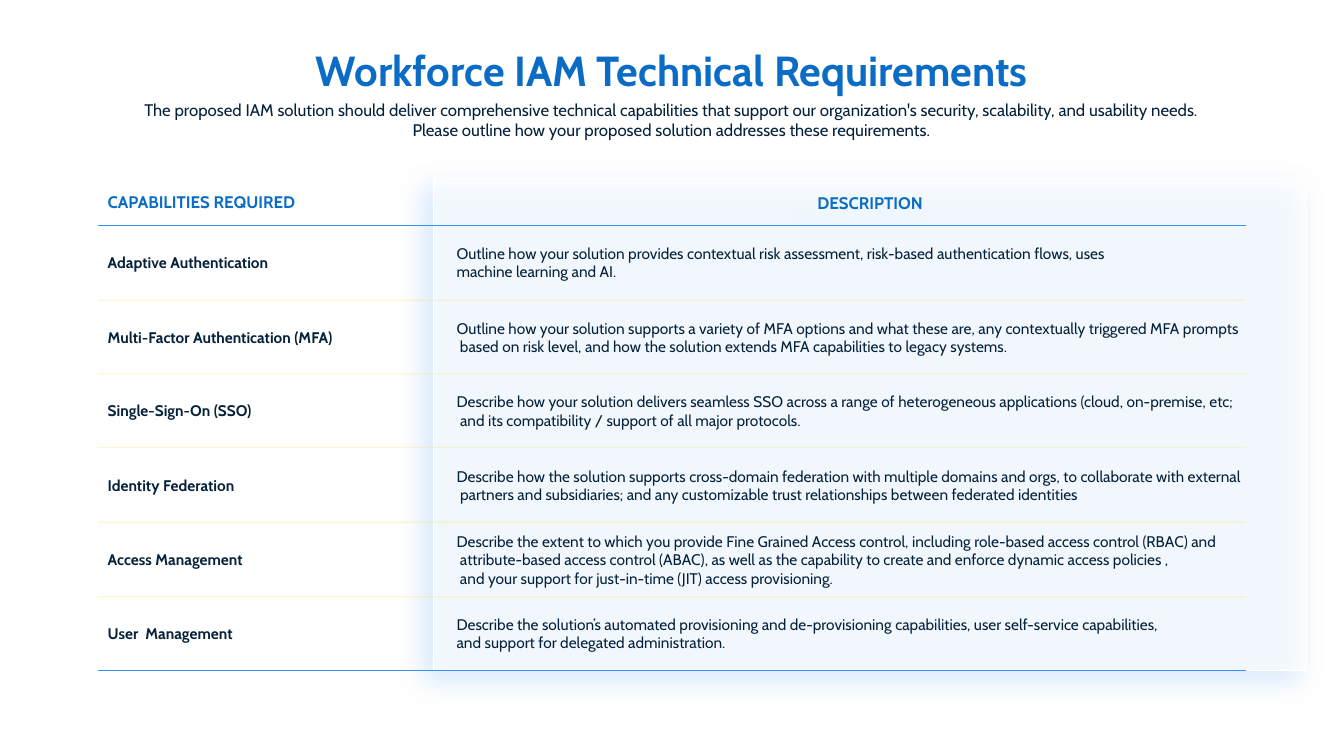
from lxml.etree import SubElement
from pptx import Presentation
from pptx.dml.color import RGBColor
from pptx.enum.shapes import MSO_CONNECTOR, MSO_SHAPE
from pptx.enum.text import MSO_ANCHOR, MSO_AUTO_SIZE, PP_ALIGN
from pptx.oxml.ns import qn
from pptx.util import Pt

PX = 9144
FONT = "Cabin"
COLORS = {
    "heading": "0B6CC6",
    "body": "06223B",
    "panel": "FFFFFF",
    "rule": "378FF2",
    "divider": "FCDA27",
}
LEFT, RIGHT = 97, 1236
TABLE_TOP, TABLE_BOTTOM = 224, 665
DESCRIPTION_LEFT = 443

# Capability, label width, description width, description
REQUIREMENTS = [
    ("Adaptive Authentication", 190, 696,
     "Outline how your solution provides contextual risk assessment, "
     "risk-based authentication flows, uses \v"
     "machine learning and AI."),
    ("Multi-Factor Authentication (MFA)", 257, 814,
     "Outline how your solution supports a variety of MFA options and what these are, "
     "any contextually triggered MFA prompts\v"
     " based on risk level, and how the solution extends MFA capabilities to legacy systems."),
    ("Single-Sign-On (SSO)", 167, 825,
     "Describe how your solution delivers seamless SSO across a range of "
     "heterogeneous applications (cloud, on-premise, etc;\v"
     " and its compatibility / support of all major protocols."),
    ("Identity Federation", 153, 825,
     "Describe how the solution supports cross-domain federation with multiple "
     "domains and orgs, to collaborate with external\v"
     " partners and subsidiaries; and any customizable trust relationships "
     "between federated identities"),
    ("Access Management", 166, 804,
     "Describe the extent to which you provide Fine Grained Access control, "
     "including role-based access control (RBAC) and\v"
     " attribute-based access control (ABAC), as well as the capability to create "
     "and enforce dynamic access policies ,\v"
     " and your support for just-in-time (JIT) access provisioning."),
    ("User  Management", 151, 755,
     "Describe the solution’s automated provisioning and de-provisioning capabilities, "
     "user self-service capabilities, \v"
     "and support for delegated administration."),
]


def emu(*lengths):
    """Turn px lengths into EMU."""
    return [length * PX for length in lengths]


def rgb(key):
    """Look up a palette colour."""
    return RGBColor.from_string(COLORS[key])


def write(frame, text, size, color, bold=False, align=PP_ALIGN.LEFT):
    """Fill a text frame with one formatted paragraph."""
    frame.text = text
    paragraph = frame.paragraphs[0]
    paragraph.alignment = align
    for run in paragraph.runs:
        run.font.name = FONT
        run.font.size = Pt(size)
        run.font.bold = bold
        run.font.color.rgb = rgb(color)


def add_text(shapes, box, text, size, color, bold=False, align=PP_ALIGN.LEFT,
             anchor=MSO_ANCHOR.MIDDLE, wrap=False):
    """Add a text box that grows with its text."""
    frame = shapes.add_textbox(*emu(*box)).text_frame
    frame.word_wrap = wrap
    frame.auto_size = MSO_AUTO_SIZE.SHAPE_TO_FIT_TEXT
    frame.vertical_anchor = anchor
    write(frame, text, size, color, bold, align)


def set_alpha(color_format, percent):
    """Set the opacity of a solid fill or line colour."""
    srgb = color_format.find(".//" + qn("a:srgbClr"))
    SubElement(srgb, qn("a:alpha"), val=str(percent * 1000))


def add_panel(shapes):
    """Add the translucent description panel with its soft shadow."""
    panel = shapes.add_shape(MSO_SHAPE.RECTANGLE, *emu(430, 176, 866, 489))
    panel.shadow.inherit = False
    panel.fill.solid()
    panel.fill.fore_color.rgb = rgb("panel")
    properties = panel.element.spPr
    set_alpha(properties.find(qn("a:solidFill")), 65)
    panel.line.color.rgb = rgb("panel")
    panel.line.width = Pt(0.5)
    shadow = SubElement(
        properties.find(qn("a:effectLst")), qn("a:outerShdw"),
        blurRad=str(Pt(20)), dist=str(Pt(10)), dir=str(135 * 60000),
        algn="tr", rotWithShape="0")
    tint = SubElement(shadow, qn("a:srgbClr"), val=COLORS["rule"])
    SubElement(tint, qn("a:alpha"), val="30000")
    frame = panel.text_frame
    frame.margin_top = 15 * PX
    frame.vertical_anchor = MSO_ANCHOR.TOP
    write(frame, "DESCRIPTION", 12, "heading", True, PP_ALIGN.CENTER)


def add_rule(shapes, y, color, opacity=100):
    """Add a horizontal rule across the whole table."""
    rule = shapes.add_connector(MSO_CONNECTOR.STRAIGHT, *emu(LEFT, y, RIGHT, y))
    rule.line.color.rgb = rgb(color)
    rule.line.width = Pt(1)
    properties = rule.element.spPr
    if opacity < 100:
        set_alpha(properties.find(qn("a:ln")), opacity)
    SubElement(properties, qn("a:effectLst"))


def add_requirements(shapes):
    """Add the capability labels, descriptions and row rules."""
    labels, descriptions, rules = (shapes.add_group_shape().shapes for _ in range(3))
    count = len(REQUIREMENTS)
    row_height = (TABLE_BOTTOM - TABLE_TOP) / count
    add_text(labels, (LEFT, 185, 209, 30), "CAPABILITIES REQUIRED", 12, "heading", True)
    for row, (capability, label_width, width, description) in enumerate(REQUIREMENTS):
        middle = TABLE_TOP + (row + 0.5) * row_height
        height = 28 + 19 * description.count("\v")
        add_text(labels, (LEFT, round(middle - 14.5), label_width, 29),
                 capability, 11, "body", True)
        add_text(descriptions, (DESCRIPTION_LEFT, round(middle - height / 2), width, height),
                 description, 11, "body")
    add_rule(rules, TABLE_TOP, "rule")
    for row in range(1, count):
        add_rule(rules, round(TABLE_TOP + row * row_height), "divider", 20)
    add_rule(rules, TABLE_BOTTOM, "rule")


def main():
    """Build the requirements slide and save it."""
    deck = Presentation()
    deck.slide_width, deck.slide_height = emu(1333, 750)
    shapes = deck.slides.add_slide(deck.slide_layouts[6]).shapes
    add_text(shapes, (109, 94, 1118, 50),
             "The proposed IAM solution should deliver comprehensive technical capabilities "
             "that support our organization's security, scalability, and usability needs. \v"
             "Please outline how your proposed solution addresses these requirements. ",
             12, "body", align=PP_ALIGN.CENTER, anchor=MSO_ANCHOR.TOP)
    add_text(shapes, (213, 39, 897, 61), " Workforce IAM Technical Requirements",
             30, "heading", True, PP_ALIGN.CENTER, MSO_ANCHOR.TOP, True)
    add_panel(shapes)
    add_requirements(shapes)
    deck.save("out.pptx")


if __name__ == "__main__":
    main()
